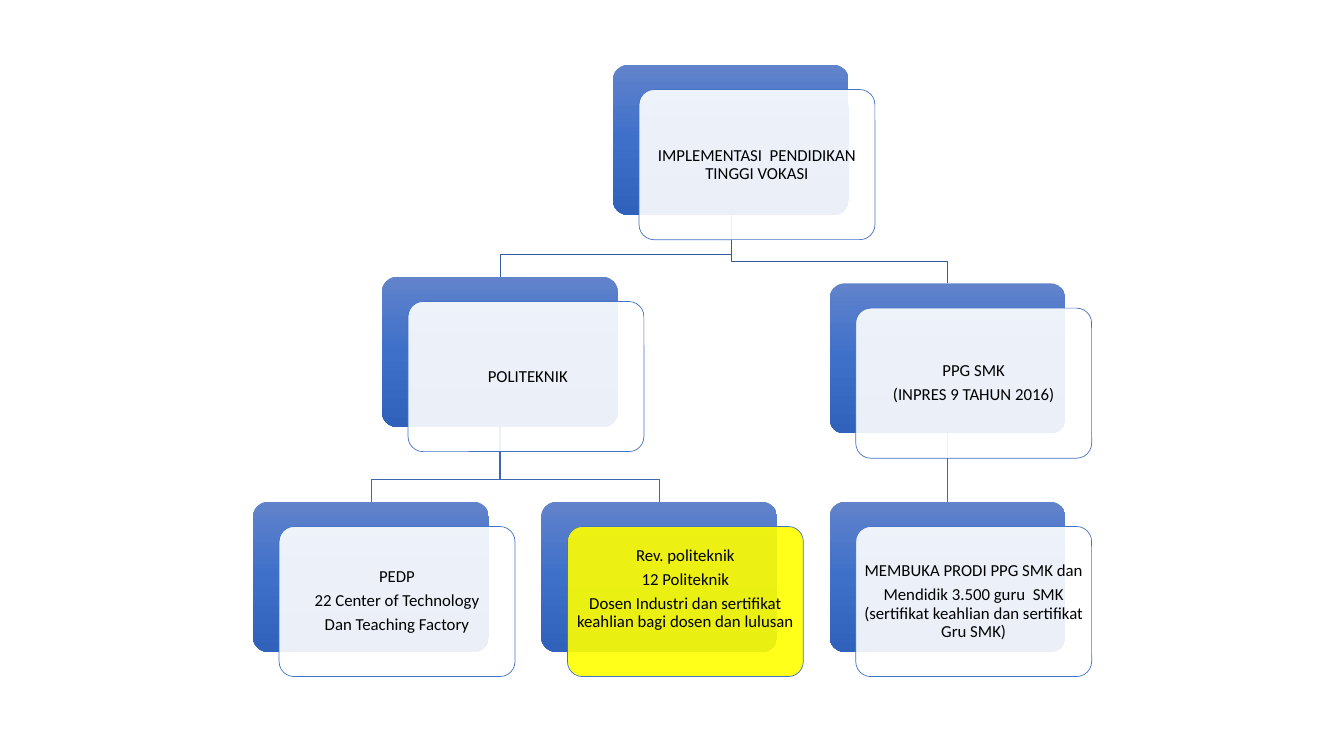
"""Build an organisation chart of vocational higher education programmes."""
import copy

import pptx
import pptx.dml.color
import pptx.enum.shapes
import pptx.enum.text
import pptx.oxml
import pptx.oxml.ns
import pptx.util

Pt = pptx.util.Pt
RGBColor = pptx.dml.color.RGBColor

WHITE = RGBColor(0xFF, 0xFF, 0xFF)
YELLOW = RGBColor(0xFF, 0xFF, 0x00)
BLACK = RGBColor(0x00, 0x00, 0x00)
OUTLINE = RGBColor(0x44, 0x72, 0xC4)
UPPER_LINK = RGBColor(0x36, 0x5B, 0x9D)
LOWER_LINK = RGBColor(0x3E, 0x67, 0xB2)
GRADIENT = [
    (0, RGBColor(0x61, 0x83, 0xCB)),
    (0.5, RGBColor(0x3E, 0x70, 0xCA)),
    (1, RGBColor(0x30, 0x62, 0xBB)),
]

FONT = "Calibri"
BOX_W, BOX_H = 168.5, 107.2
SHIFT_X, SHIFT_Y = 18.7, 17.7
BEND = 15.8
INSET = 0.5
LEAF_X, LEAF_Y, LEAF_STEP = 180.7, 358.4, 205.95

NODES = {
    "root": (437.8, 46.3, ["IMPLEMENTASI  PENDIDIKAN TINGGI VOKASI"]),
    "politeknik": (272.8, 197.7, [" POLITEKNIK"]),
    "pedp": (LEAF_X, LEAF_Y, [
        "PEDP", "22 Center of Technology", "Dan Teaching Factory"]),
    "revitalisasi": (LEAF_X + LEAF_STEP, LEAF_Y, [
        "Rev. politeknik", "12 Politeknik",
        "Dosen Industri dan sertifikat keahlian bagi dosen dan lulusan"]),
    "ppg": (LEAF_X + 2 * LEAF_STEP, 202.4, [
        "PPG SMK", "(INPRES 9 TAHUN 2016)"]),
    "prodi": (LEAF_X + 2 * LEAF_STEP, LEAF_Y, [
        "MEMBUKA PRODI PPG SMK dan",
        "Mendidik 3.500 guru  SMK (sertifikat keahlian dan sertifikat Gru SMK)"]),
}
LINKS = [
    ("ppg", "prodi", LOWER_LINK),
    ("root", "ppg", UPPER_LINK),
    ("politeknik", "revitalisasi", LOWER_LINK),
    ("politeknik", "pedp", LOWER_LINK),
    ("root", "politeknik", UPPER_LINK),
]


def add_link(s, parent, child, color):
    """Draw an elbow line from the bottom of a parent to the top of a child."""
    x1, y1 = parent[0] + BOX_W / 2, parent[1] + BOX_H
    x2, y2 = child[0] + BOX_W / 2, child[1]
    points = [(x2, y2)]
    if x1 != x2:
        points = [(x1, y2 - BEND), (x2, y2 - BEND)] + points
    builder = s.shapes.build_freeform(Pt(x1), Pt(y1))
    builder.add_line_segments([(Pt(x), Pt(y)) for x, y in points], close=False)
    sp = builder.convert_to_shape()
    sp.shadow.inherit = False
    sp.fill.background()
    sp.line.color.rgb = color
    sp.line.width = Pt(0.5)


def add_box(s, x, y):
    """Add a rounded box of the common size."""
    sp = s.shapes.add_shape(
        pptx.enum.shapes.MSO_SHAPE.ROUNDED_RECTANGLE,
        Pt(x), Pt(y), Pt(BOX_W), Pt(BOX_H))
    sp.adjustments[0] = 0.1
    sp.shadow.inherit = False
    return sp


def add_back(s, x, y):
    """Add the blue gradient box behind a card."""
    sp = add_box(s, x, y)
    sp.line.fill.background()
    sp.fill.gradient()
    sp.fill.gradient_angle = 270
    stops = sp._element.spPr.find(".//" + pptx.oxml.ns.qn("a:gsLst"))
    stops.insert(1, copy.deepcopy(stops[0]))
    for stop, (position, color) in zip(sp.fill.gradient_stops, GRADIENT):
        stop.position = position
        stop.color.rgb = color


def add_card(s, x, y, lines, color, bottom):
    """Add the translucent card that carries the text."""
    sp = add_box(s, x, y)
    sp.fill.solid()
    sp.fill.fore_color.rgb = color
    rgb = sp._element.spPr.find(".//" + pptx.oxml.ns.qn("a:srgbClr"))
    alpha = pptx.oxml.parse_xml(
        "<a:alpha %s val='90000'/>" % pptx.oxml.ns.nsdecls("a"))
    rgb.append(alpha)
    sp.line.color.rgb = OUTLINE
    sp.line.width = Pt(0.5)
    tf = sp.text_frame
    tf.word_wrap = True
    tf.vertical_anchor = pptx.enum.text.MSO_ANCHOR.MIDDLE
    tf.margin_left = tf.margin_right = tf.margin_top = Pt(INSET)
    tf.margin_bottom = Pt(bottom)
    for i, line in enumerate(lines):
        p = tf.add_paragraph() if i else tf.paragraphs[0]
        p.alignment = pptx.enum.text.PP_ALIGN.CENTER
        p.line_spacing = 0.9
        p.space_after = Pt(4.2)
        r = p.add_run()
        r.text = line
        r.font.name = FONT
        r.font.size = Pt(12)
        r.font.color.rgb = BLACK


def main():
    """Build and save the slide."""
    prs = pptx.Presentation()
    prs.slide_width, prs.slide_height = Pt(960), Pt(540)
    s = prs.slides.add_slide(prs.slide_layouts[6])
    for parent, child, color in LINKS:
        add_link(s, NODES[parent], NODES[child], color)
    for name, (x, y, lines) in NODES.items():
        marked = name == "revitalisasi"
        add_back(s, x, y)
        add_card(s, x + SHIFT_X, y + SHIFT_Y, lines,
                 YELLOW if marked else WHITE, 18 if marked else INSET)
    prs.save("out.pptx")


if __name__ == "__main__":
    main()
